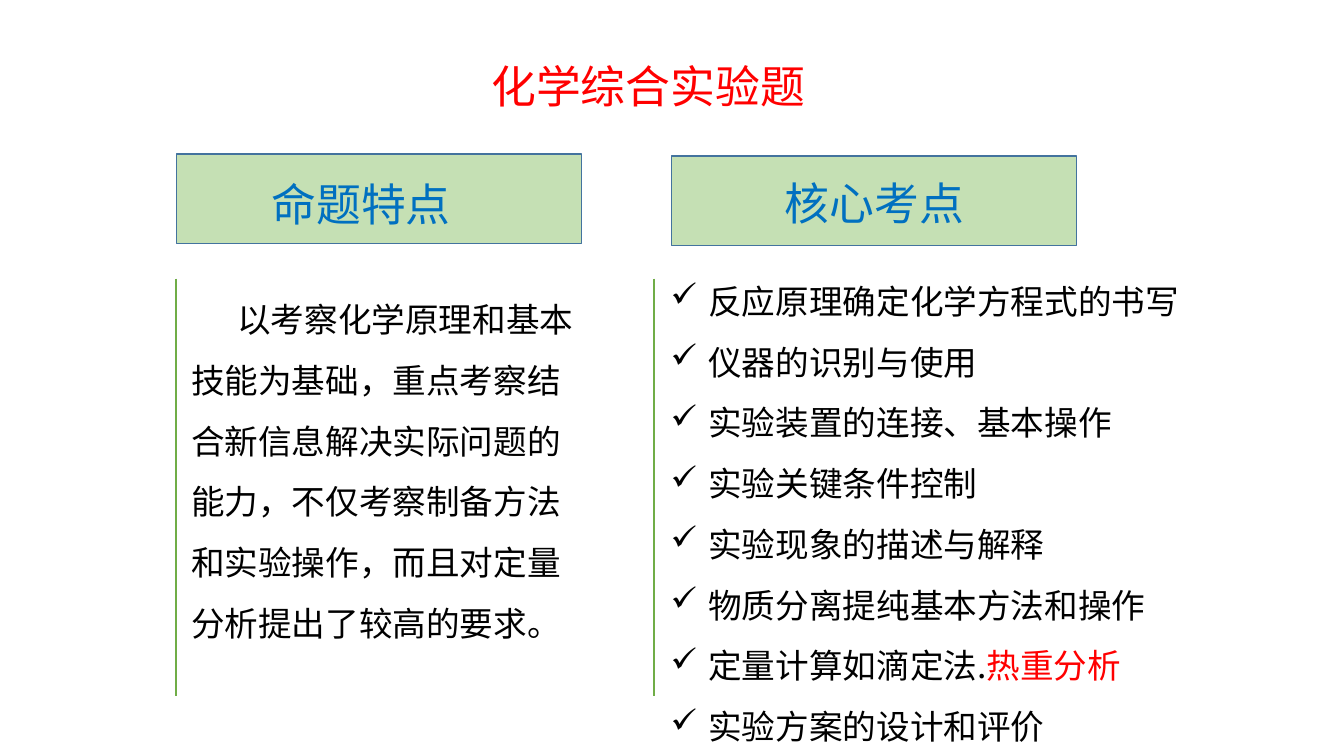
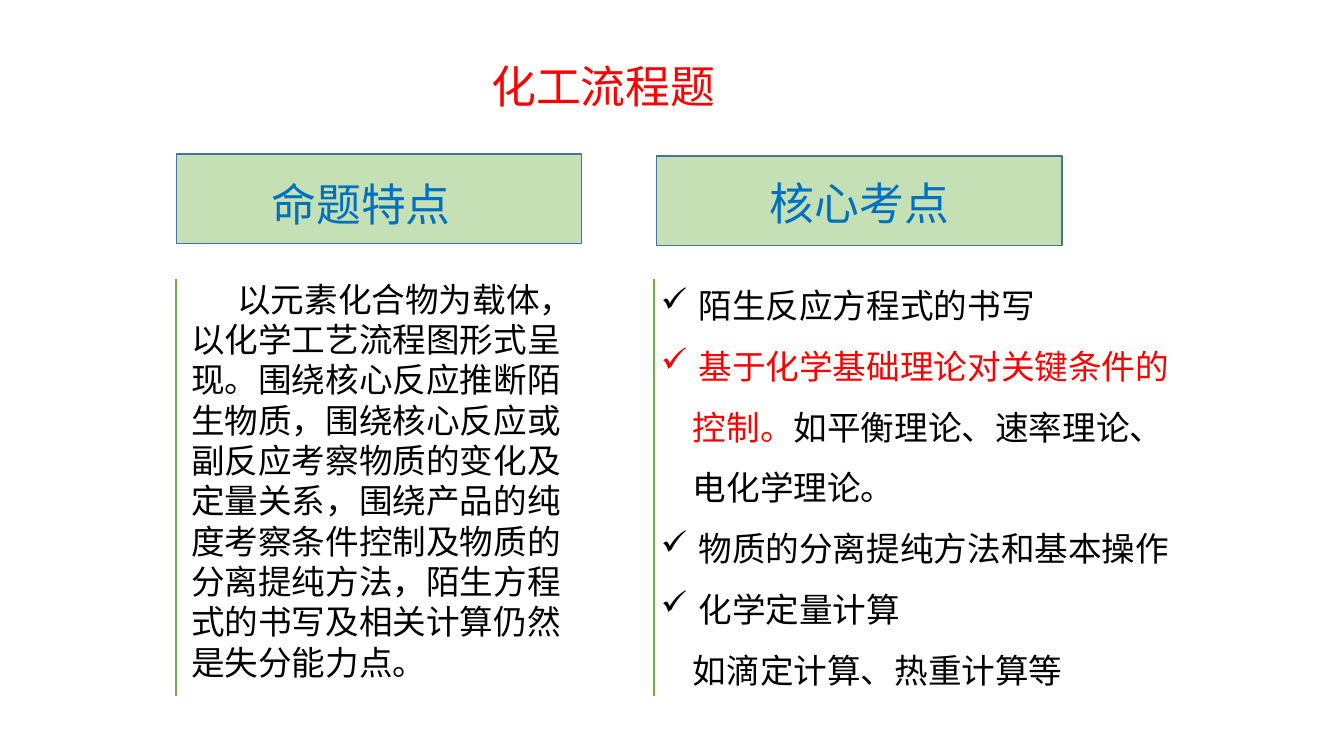
"""Build two slides that set the traits of a question type beside its key points."""
import lxml.etree
import pptx
import pptx.dml.color
import pptx.enum.shapes
import pptx.oxml.ns
import pptx.util

Pt = pptx.util.Pt
qn = pptx.oxml.ns.qn

THEME = {
    "font": "Noto Sans CJK SC",
    "title": pptx.dml.color.RGBColor(0xFF, 0x00, 0x00),
    "heading": pptx.dml.color.RGBColor(0x00, 0x70, 0xC0),
    "body": pptx.dml.color.RGBColor(0x00, 0x00, 0x00),
    "accent": pptx.dml.color.RGBColor(0xFF, 0x00, 0x00),
    "panel": pptx.dml.color.RGBColor(0xC5, 0xE0, 0xB4),
    "panel_line": pptx.dml.color.RGBColor(0x43, 0x73, 0x9E),
    "rule": pptx.dml.color.RGBColor(0x70, 0xAD, 0x47),
    "large": 32,
    "small": 24,
}
LARGE_LEADING, TIGHT_LEADING, OPEN_LEADING = 38.4, 28.8, 43.4
PLAIN, OPENING, POINT, FOLLOW = (19, 0), (19, 33), (45, -27), (41, 0)

SLIDES = [
    {
        "title": "化学综合实验题",
        "traits": "以考察化学原理和基本技能为基础，重点考察结合新信息解决实际问题的能力，"
                  "不仅考察制备方法和实验操作，而且对定量分析提出了较高的要求。",
        "leading": OPEN_LEADING,
        "panel_left": 479.5,
        "points_at": (461, 186),
        "points": [
            (POINT, [("反应原理确定化学方程式的书写", "body")]),
            (POINT, [("仪器的识别与使用", "body")]),
            (POINT, [("实验装置的连接、基本操作", "body")]),
            (POINT, [("实验关键条件控制", "body")]),
            (POINT, [("实验现象的描述与解释", "body")]),
            (POINT, [("物质分离提纯基本方法和操作", "body")]),
            (POINT, [("定量计算如滴定法.", "body"), ("热重分析", "accent")]),
            (POINT, [("实验方案的设计和评价", "body")]),
        ],
    },
    {
        "title": "化工流程题",
        "traits": "以元素化合物为载体，以化学工艺流程图形式呈现。围绕核心反应推断陌生物质，"
                  "围绕核心反应或副反应考察物质的变化及定量关系，围绕产品的纯度考察条件控制及"
                  "物质的分离提纯方法，陌生方程式的书写及相关计算仍然是失分能力点。",
        "leading": TIGHT_LEADING,
        "panel_left": 469,
        "points_at": (454, 189),
        "points": [
            (POINT, [("陌生反应方程式的书写", "body")]),
            (POINT, [("基于化学基础理论对关键条件的", "accent")]),
            (FOLLOW, [("控制。", "accent"), ("如平衡理论、速率理论、", "body")]),
            (FOLLOW, [("电化学理论。", "body")]),
            (POINT, [("物质的分离提纯方法和基本操作", "body")]),
            (POINT, [("化学定量计算", "body")]),
            (FOLLOW, [("如滴定计算、热重计算等", "body")]),
        ],
    },
]


def add_text(page, left, top, width, height, paragraphs, size, leading):
    """Add a text box without insets; each paragraph is an indent pair and its spans."""
    box = page.shapes.add_textbox(Pt(left), Pt(top), Pt(width), Pt(height))
    frame = box.text_frame
    frame.word_wrap = True
    frame.margin_left = frame.margin_right = frame.margin_top = frame.margin_bottom = 0
    for index, (indent, spans) in enumerate(paragraphs):
        para = frame.add_paragraph() if index else frame.paragraphs[0]
        para.line_spacing = Pt(leading)
        properties = para._p.get_or_add_pPr()
        properties.set("marL", str(Pt(indent[0])))
        properties.set("indent", str(Pt(indent[1])))
        if indent == POINT:
            lxml.etree.SubElement(properties, qn("a:buChar")).set("char", "✓")
        para.font.size = Pt(size)
        para.font.name = THEME["font"]
        para.font.color.rgb = THEME[spans[0][1]]
        east_asian = lxml.etree.SubElement(properties.find(qn("a:defRPr")), qn("a:ea"))
        east_asian.set("typeface", THEME["font"])
        for text, colour in spans:
            span = para.add_run()
            span.text = text
            if colour != spans[0][1]:
                span.font.color.rgb = THEME[colour]


deck = pptx.Presentation()
deck.slide_width, deck.slide_height = Pt(960), Pt(540)

for content in SLIDES:
    page = deck.slides.add_slide(deck.slide_layouts[6])
    add_text(page, 332, 42, 296, 39, [(PLAIN, [(content["title"], "title")])],
             THEME["large"], LARGE_LEADING)

    panel_left = content["panel_left"]
    for heading, left, top, text_left, text_top, rule_left in (
        ("命题特点", 126, 110, 175, 126.5, 126),
        ("核心考点", panel_left, 111.5, panel_left + 62, 125.5, 467),
    ):
        panel = page.shapes.add_shape(pptx.enum.shapes.MSO_SHAPE.RECTANGLE,
                                      Pt(left), Pt(top), Pt(289.5), Pt(64))
        panel.shadow.inherit = False
        panel.fill.solid()
        panel.fill.fore_color.rgb = THEME["panel"]
        panel.line.color.rgb = THEME["panel_line"]
        panel.line.width = Pt(1)
        add_text(page, text_left, text_top, 191.5, 39, [(PLAIN, [(heading, "heading")])],
                 THEME["large"], LARGE_LEADING)
        rule = page.shapes.add_connector(pptx.enum.shapes.MSO_CONNECTOR.STRAIGHT,
                                         Pt(rule_left), Pt(199), Pt(rule_left), Pt(497))
        rule.line.color.rgb = THEME["rule"]
        rule.line.width = Pt(1.5)
        lxml.etree.SubElement(rule._element.spPr, qn("a:effectLst"))

    add_text(page, 117.5, 199, 306, 290, [(OPENING, [(content["traits"], "body")])],
             THEME["small"], content["leading"])
    points_left, points_top = content["points_at"]
    add_text(page, points_left, points_top, 438.5, len(content["points"]) * OPEN_LEADING,
             content["points"], THEME["small"], OPEN_LEADING)

deck.save("out.pptx")
